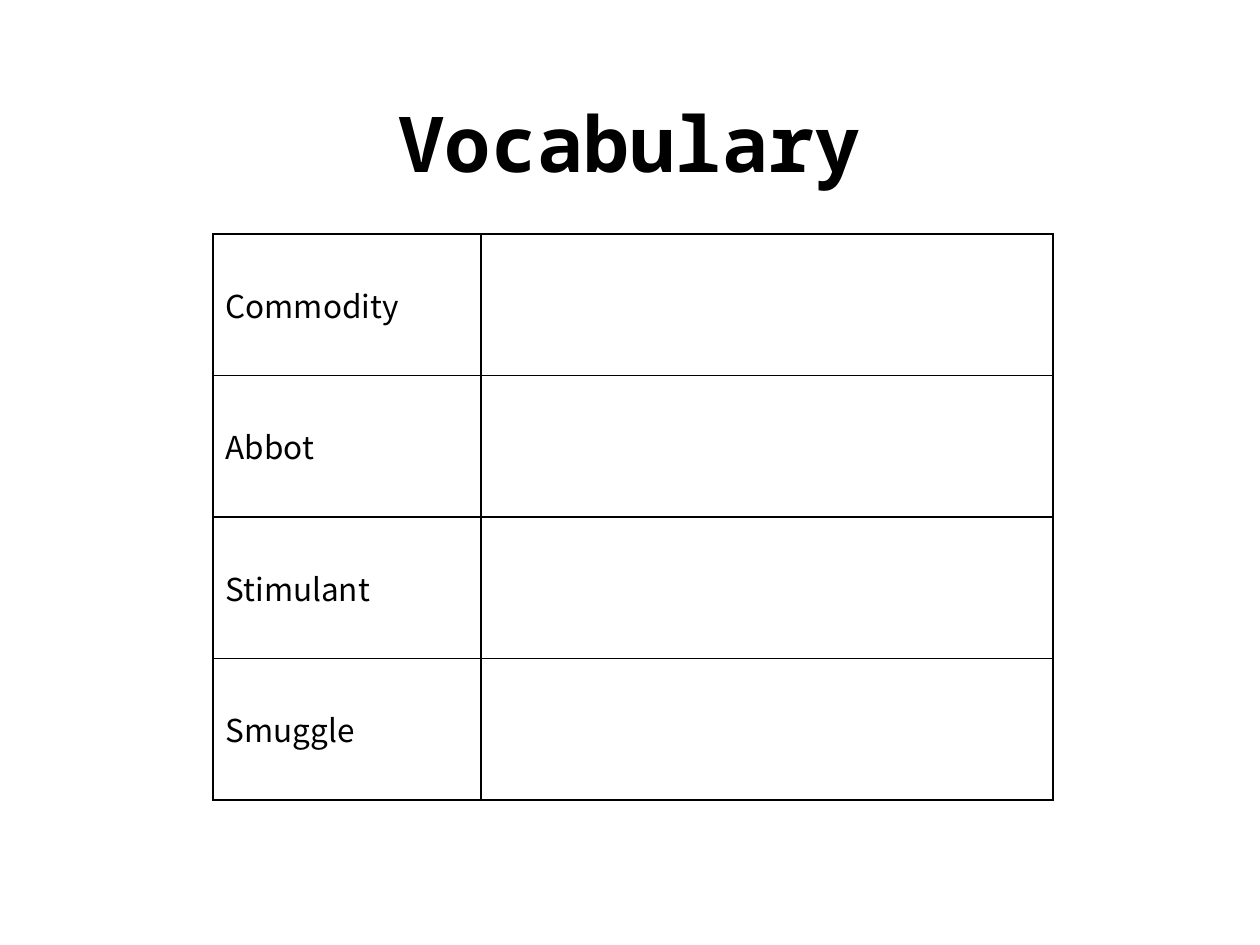
from dataclasses import dataclass

from lxml import etree
from pptx import Presentation
from pptx.dml.color import RGBColor
from pptx.enum import text
from pptx.oxml import ns
from pptx.util import Emu, Inches, Pt

SCALE = Inches(1) / 126


@dataclass(frozen=True)
class Theme:
    ink: str = "000000"
    paper: str = "FFFFFF"
    head: str = "Noto Sans Mono"
    body: str = "Noto Sans CJK KR"
    large: int = 44
    small: int = 18
    rule: int = 1


THEME = Theme()
WORDS = ["Commodity", "Abbot", "Stimulant", "Smuggle"]


def px(n):
    return Emu(round(n * SCALE))


def style(font, **values):
    font.color.rgb = RGBColor.from_string(THEME.ink)
    for name, value in values.items():
        setattr(font, name, value)


def add_title(slide, words, box):
    frame = slide.shapes.add_textbox(*map(px, box)).text_frame
    frame.word_wrap = True
    frame.vertical_anchor = text.MSO_ANCHOR.MIDDLE
    para = frame.paragraphs[0]
    para.alignment = text.PP_ALIGN.CENTER
    run = para.add_run()
    run.text = words
    style(run.font, name=THEME.head, size=Pt(THEME.large), bold=True)


def add_rules(cell):
    props = cell._tc.get_or_add_tcPr()
    for place, side in enumerate(("lnL", "lnR", "lnT", "lnB")):
        line = etree.Element(ns.qn(f"a:{side}"), w=str(Pt(THEME.rule)))
        fill = etree.SubElement(line, ns.qn("a:solidFill"))
        etree.SubElement(fill, ns.qn("a:srgbClr"), val=THEME.ink)
        props.insert(place, line)


def add_grid(slide, words, box, widths):
    frame = slide.shapes.add_table(len(words), len(widths), *map(px, box))
    table = frame.table
    table.first_row = table.horz_banding = False
    for col, width in zip(table.columns, widths):
        col.width = px(width)
    for row, word in zip(table.rows, words):
        row.height = px(box[3] / len(words))
        for cell in row.cells:
            cell.fill.solid()
            cell.fill.fore_color.rgb = RGBColor.from_string(THEME.paper)
            cell.vertical_anchor = text.MSO_ANCHOR.MIDDLE
            add_rules(cell)
        run = row.cells[0].text_frame.paragraphs[0].add_run()
        run.text = word
        style(run.font, name=THEME.body, size=Pt(THEME.small), bold=False)


def main():
    deck = Presentation()
    deck.slide_width, deck.slide_height = px(1260), px(945)
    slide = deck.slides.add_slide(deck.slide_layouts[6])
    add_title(slide, "Vocabulary", (63, 63, 1134, 158))
    add_grid(slide, WORDS, (213, 234, 840, 566), (268, 572))
    deck.save("out.pptx")


if __name__ == "__main__":
    main()
